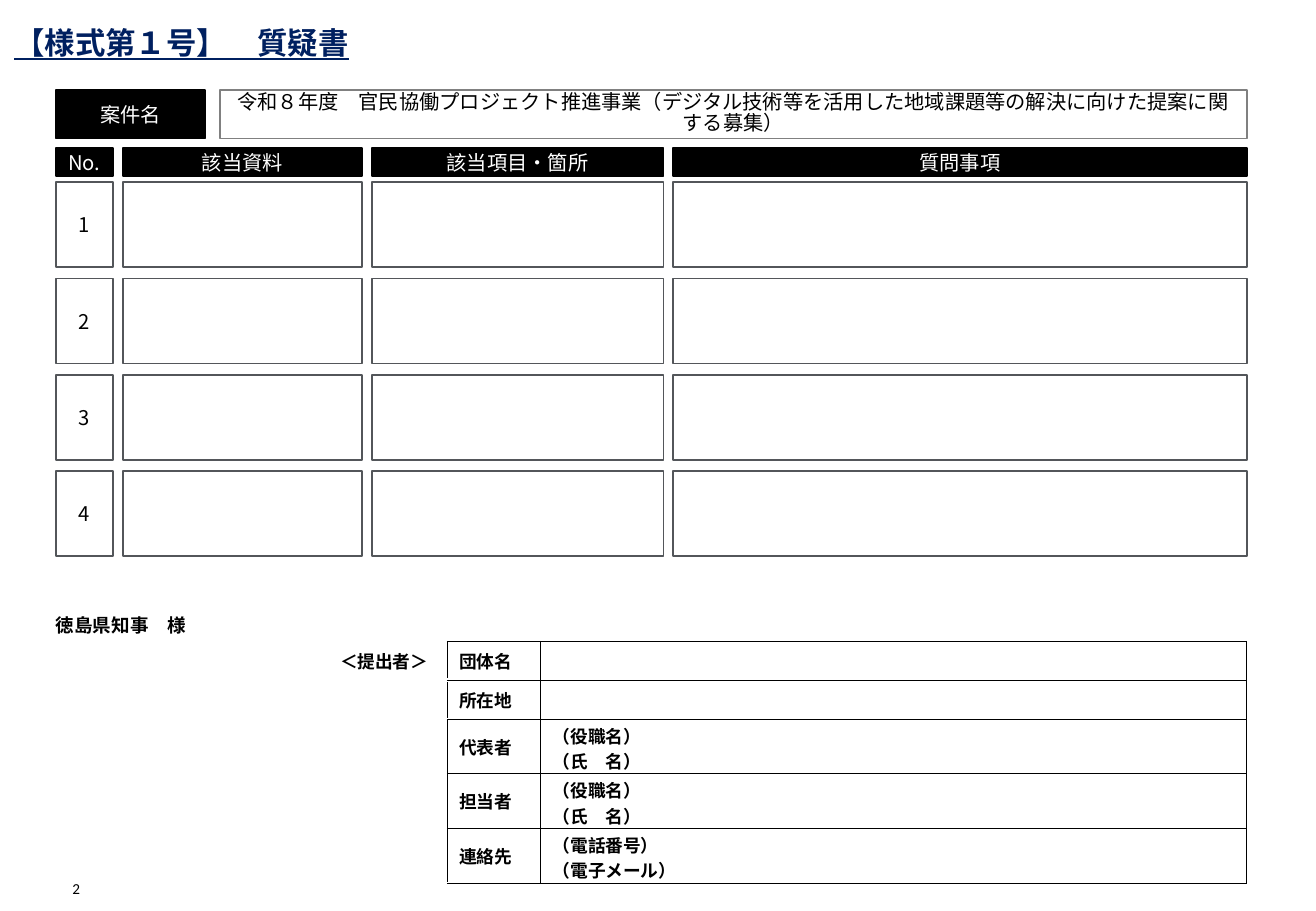
"""Build the question form slide with its entry grid and submitter table."""
from lxml.etree import SubElement
from pptx import Presentation
from pptx.dml.color import RGBColor
from pptx.enum.shapes import MSO_SHAPE as Shape
from pptx.enum.text import MSO_ANCHOR as Anchor, PP_ALIGN as Align
from pptx.oxml.ns import qn
from pptx.util import Inches, Pt

BLACK = RGBColor(0, 0, 0)
WHITE = RGBColor(255, 255, 255)
NAVY = RGBColor(0x00, 0x20, 0x60)
GRAY = RGBColor(0x80, 0x80, 0x80)
SLATE = RGBColor(0x53, 0x56, 0x5A)
CJK = "Noto Sans CJK JP"

LEFT, GAP = 0.46, 0.08
GRID_WIDTHS = [0.47, 1.97, 2.4, 4.72]
HEADINGS = ["No.", "該当資料", "該当項目・箇所", "質問事項"]
HEADING_TOP, HEADING_HEIGHT = 1.22, 0.23
ENTRY_TOP, ENTRY_HEIGHT, ENTRY_COUNT = 1.5, 0.7, 4
ENTRY_PITCH = 2.38 / 3


def add_text(paragraph, text, size, color, font=CJK, bold=False):
    run = paragraph.add_run()
    run.text = text
    run.font.size = Pt(size)
    run.font.name = font
    run.font.bold = bold
    run.font.color.rgb = color
    SubElement(run.font._element, qn("a:ea")).set("typeface", CJK)
    return run


def add_box(left, top, width, height, fill, line, text="", color=BLACK):
    box = slide.shapes.add_shape(
        Shape.RECTANGLE, Inches(left), Inches(top), Inches(width), Inches(height))
    box.shadow.inherit = False
    box.fill.solid()
    box.fill.fore_color.rgb = fill
    box.line.color.rgb = line
    box.line.width = Pt(1)
    box.text_frame.vertical_anchor = Anchor.MIDDLE
    paragraph = box.text_frame.paragraphs[0]
    paragraph.alignment = Align.CENTER
    if text:
        add_text(paragraph, text, 12, color)
    return paragraph


presentation = Presentation()
presentation.slide_width = Inches(10.83)
presentation.slide_height = Inches(7.5)
slide = presentation.slides.add_slide(presentation.slide_layouts[6])

title = slide.shapes.add_textbox(Inches(0.02), 0, Inches(5.37), Inches(0.51)).text_frame
title.word_wrap = True
title.paragraphs[0].line_spacing = 1.5
add_text(title.paragraphs[0], "【様式第１号】　質疑書", 18, NAVY, bold=True).font.underline = True

add_box(LEFT, 0.74, 1.23, 0.4, BLACK, BLACK, "案件名", WHITE)
project = add_box(
    1.81, 0.74, 8.45, 0.4, WHITE, GRAY,
    "令和８年度　官民協働プロジェクト推進事業（デジタル技術等を活用した地域課題等の解決に向けた提案に関する募集）")
project.line_spacing = 0.85

for column, (heading, width) in enumerate(zip(HEADINGS, GRID_WIDTHS)):
    left = LEFT + sum(GRID_WIDTHS[:column]) + column * GAP
    add_box(left, HEADING_TOP, width, HEADING_HEIGHT, BLACK, BLACK, heading, WHITE)
    for entry in range(ENTRY_COUNT):
        number = str(entry + 1) if column == 0 else ""
        add_box(left, ENTRY_TOP + entry * ENTRY_PITCH, width, ENTRY_HEIGHT, WHITE, SLATE, number)

addressee = slide.shapes.add_textbox(
    Inches(LEFT), Inches(4.99), Inches(1.53), Inches(0.23)).text_frame
addressee.word_wrap = True
addressee.paragraphs[0].line_spacing = Pt(18)
add_text(addressee.paragraphs[0], "徳島県知事　様", 11, BLACK, "Calibri", True)

page_number = slide.shapes.add_textbox(
    Inches(LEFT), Inches(7.2), Inches(0.2), Inches(0.19)).text_frame
page_number.word_wrap = False
page_number.vertical_anchor = Anchor.BOTTOM
page_number.paragraphs[0].alignment = Align.RIGHT
add_text(page_number.paragraphs[0], "2", 9, BLACK, "Calibri")

for frame in (addressee, page_number):
    frame.margin_left = frame.margin_right = frame.margin_top = frame.margin_bottom = 0

SUBMITTER_ROWS = [
    (0.32, ["＜提出者＞"], ["団体名"], []),
    (0.32, [], ["所在地"], []),
    (0.45, [], ["代表者"], ["（役職名）", "（氏　名）"]),
    (0.45, [], ["担当者"], ["（役職名）", "（氏　名）"]),
    (0.45, [], ["連絡先"], ["（電話番号）", "（電子メール）"]),
]
table = slide.shapes.add_table(
    len(SUBMITTER_ROWS), 3, Inches(2.7), Inches(5.28), Inches(7.56), Inches(1.99)).table
table.first_row = False
table.horz_banding = False
for column, width in enumerate([0.98, 0.77, 5.81]):
    table.columns[column].width = Inches(width)

for row, (height, *contents) in enumerate(SUBMITTER_ROWS):
    table.rows[row].height = Inches(height)
    for column, lines in enumerate(contents):
        cell = table.cell(row, column)
        cell.vertical_anchor = Anchor.MIDDLE
        cell.margin_top = Inches(0.03) if column == 2 else 0
        cell.margin_bottom = 0
        for index, text in enumerate(lines):
            frame = cell.text_frame
            paragraph = frame.add_paragraph() if index else frame.paragraphs[0]
            add_text(paragraph, text, 10.5, BLACK, "Arial", True)
        if not lines:
            SubElement(cell.text_frame.paragraphs[0]._p, qn("a:endParaRPr")).set("sz", "1050")
        properties = cell._tc.get_or_add_tcPr()
        for side in "LRTB":
            hidden = column == 0 and side != "R"
            points = (3 if row == 0 and side == "B" else 1) if hidden else 0.5
            border = SubElement(properties, qn(f"a:ln{side}"), w=str(Pt(points)))
            fill = SubElement(border, qn("a:solidFill"))
            SubElement(fill, qn("a:srgbClr")).set("val", str(WHITE if hidden else BLACK))
        cell.fill.background()

presentation.save("out.pptx")
